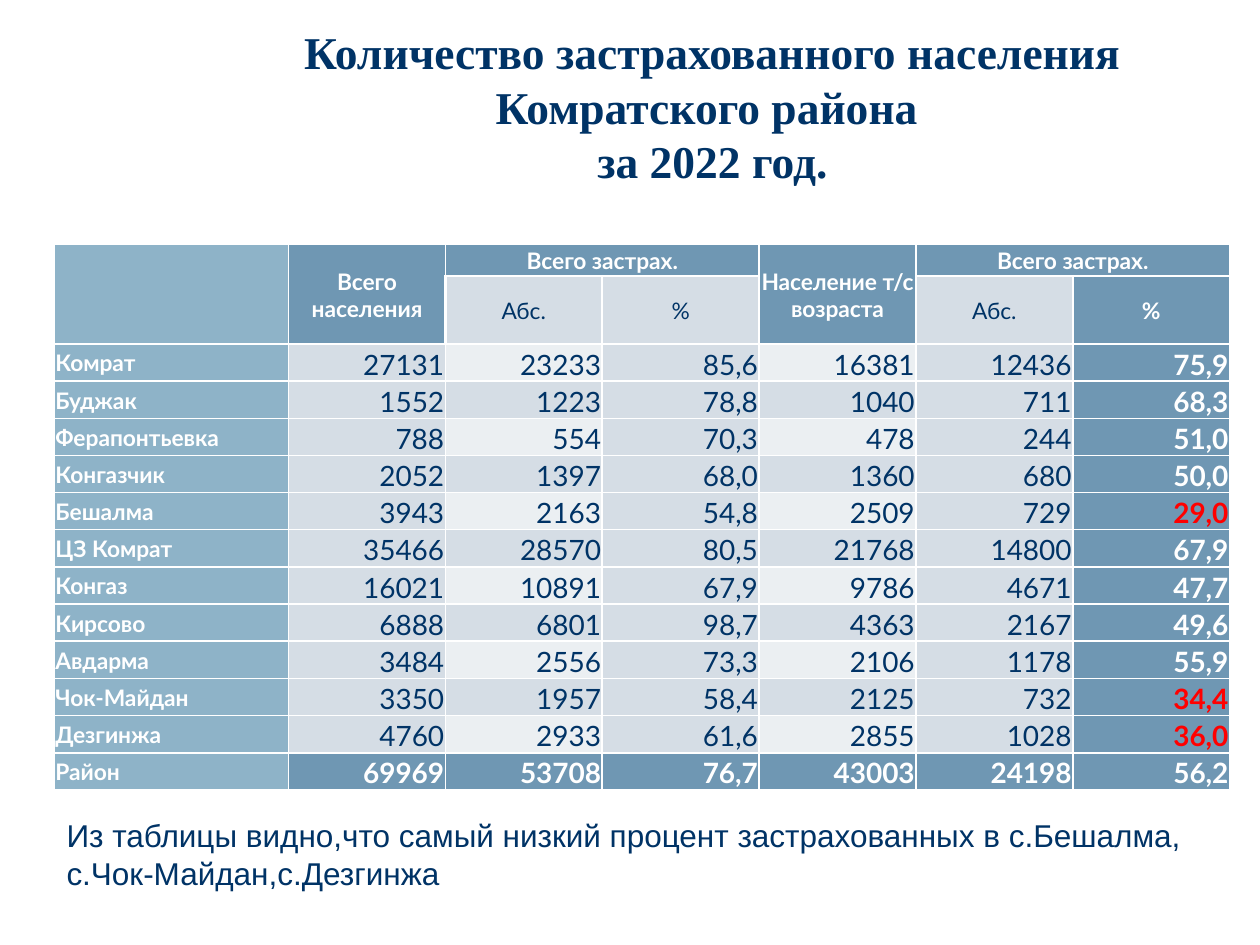
from dataclasses import dataclass

from lxml import etree
from pptx import Presentation
from pptx.dml.color import RGBColor
from pptx.enum.text import MSO_ANCHOR, MSO_AUTO_SIZE, PP_ALIGN
from pptx.oxml.ns import qn
from pptx.util import Inches, Pt

CENTER, RIGHT, JUSTIFY = PP_ALIGN.CENTER, PP_ALIGN.RIGHT, PP_ALIGN.JUSTIFY
MIDDLE, BOTTOM = MSO_ANCHOR.MIDDLE, MSO_ANCHOR.BOTTOM
NO_AUTOFIT = MSO_AUTO_SIZE.NONE
TITLE_ONLY = 5


@dataclass(frozen=True)
class Theme:
    navy: str = "003366"
    white: str = "FFFFFF"
    red: str = "FF0000"
    name_fill: str = "8EB3C8"
    accent_fill: str = "6F97B3"
    band_fill: str = "D5DDE5"
    pale_fill: str = "EBEFF2"
    title_font: str = "Times New Roman"
    table_font: str = "Lato"
    note_font: str = "Arial"
    title_size: int = 26
    label_size: int = 13
    value_size: int = 16
    note_size: int = 18
    thin_line: float = 1
    thick_line: float = 1.5


THEME = Theme()
SLIDE_WIDTH, SLIDE_HEIGHT = Inches(10), Inches(7.5)
GRID_COLUMNS, GRID_ROWS = 100, 75

TITLE = "Количество застрахованного населения\vКомратского района \vза 2022 год."
NOTE = ("Из таблицы видно,что самый низкий процент застрахованных "
        "в с.Бешалма, с.Чок-Майдан,с.Дезгинжа")
HEADERS = [
    ["", "Всего населения", "Всего застрах.", "", "Население т/с возраста", "Всего застрах.", ""],
    ["", "", "Абс.", "%", "", "Абс.", "%"],
]
DISTRICTS = [
    ["Комрат", "27131", "23233", "85,6", "16381", "12436", "75,9"],
    ["Буджак", "1552", "1223", "78,8", "1040", "711", "68,3"],
    ["Ферапонтьевка", "788", "554", "70,3", "478", "244", "51,0"],
    ["Конгазчик", "2052", "1397", "68,0", "1360", "680", "50,0"],
    ["Бешалма", "3943", "2163", "54,8", "2509", "729", "29,0"],
    ["ЦЗ Комрат", "35466", "28570", "80,5", "21768", "14800", "67,9"],
    ["Конгаз", "16021", "10891", "67,9", "9786", "4671", "47,7"],
    ["Кирсово", "6888", "6801", "98,7", "4363", "2167", "49,6"],
    ["Авдарма", "3484", "2556", "73,3", "2106", "1178", "55,9"],
    ["Чок-Майдан", "3350", "1957", "58,4", "2125", "732", "34,4"],
    ["Дезгинжа", "4760", "2933", "61,6", "2855", "1028", "36,0"],
]
TOTAL = ["Район", "69969", "53708", "76,7", "43003", "24198", "56,2"]
LOWEST = {"Бешалма", "Чок-Майдан", "Дезгинжа"}

ROWS = HEADERS + DISTRICTS + [TOTAL]
HEADER_COUNT = len(HEADERS)
LAST_ROW, LAST_COLUMN = len(ROWS) - 1, len(TOTAL) - 1
TALL_COLUMNS = (0, 1, 4)
WIDE_COLUMNS = (2, 5)


def across(columns):
    return round(SLIDE_WIDTH * columns / GRID_COLUMNS)


def down(rows):
    return round(SLIDE_HEIGHT * rows / GRID_ROWS)


def area(left, top, width, height):
    return across(left), down(top), across(width), down(height)


def style_runs(paragraph, font, size, color, bold=False):
    for run in paragraph.runs:
        run.font.name = font
        run.font.size = Pt(size)
        run.font.bold = bold
        run.font.color.rgb = RGBColor.from_string(color)


def add_title(slide):
    title = slide.shapes.title
    title.left, title.top, title.width, title.height = area(15.4, 1.3, 82.3, 14.2)
    frame = title.text_frame
    frame.auto_size = NO_AUTOFIT
    frame.vertical_anchor = MIDDLE
    frame.text = TITLE
    frame.paragraphs[0].alignment = CENTER
    style_runs(frame.paragraphs[0], THEME.title_font, THEME.title_size, THEME.navy, True)


def add_note(slide):
    frame = slide.shapes.add_textbox(*area(4.3, 64.3, 93.3, 7.1)).text_frame
    frame.word_wrap = True
    frame.text = NOTE
    style_runs(frame.paragraphs[0], THEME.note_font, THEME.note_size, THEME.navy)


def is_accent(row, column):
    return row in (0, LAST_ROW) or column == LAST_COLUMN or (row == 1 and column in TALL_COLUMNS)


def fill_color(row, column):
    if column == 0:
        return THEME.name_fill
    if is_accent(row, column):
        return THEME.accent_fill
    is_odd_district = row >= HEADER_COUNT and (row - HEADER_COUNT) % 2 == 0
    return THEME.pale_fill if is_odd_district and column in (2, 4) else THEME.band_fill


def text_color(row, column):
    if column == LAST_COLUMN and ROWS[row][0] in LOWEST:
        return THEME.red
    return THEME.white if column == 0 or is_accent(row, column) else THEME.navy


def thick_sides(row, column):
    """Heavy rules frame the header groups and the total row."""
    def heavy_below(above):
        return above in (0, LAST_ROW - 1) or (above == 1 and column in TALL_COLUMNS)

    sides = {"lnT"} if heavy_below(row - 1) else set()
    if heavy_below(row):
        sides.add("lnB")
    if row == 1 and column in WIDE_COLUMNS:
        sides.add("lnL")
    if row == 1 and column == 3:
        sides.add("lnR")
    return sides


def set_borders(cell, heavy):
    properties = cell._tc.get_or_add_tcPr()
    for side in ("lnL", "lnR", "lnT", "lnB"):
        width = THEME.thick_line if side in heavy else THEME.thin_line
        line = etree.SubElement(properties, qn(f"a:{side}"), w=str(Pt(width)))
        fill = etree.SubElement(line, qn("a:solidFill"))
        etree.SubElement(fill, qn("a:srgbClr"), val=THEME.white)


def format_cell(cell, row, column):
    is_value = row >= HEADER_COUNT and column > 0
    set_borders(cell, thick_sides(row, column))
    cell.fill.solid()
    cell.fill.fore_color.rgb = RGBColor.from_string(fill_color(row, column))
    cell.margin_left = cell.margin_right = cell.margin_top = Inches(0.01)
    cell.margin_bottom = 0
    cell.vertical_anchor = BOTTOM if is_value else MIDDLE
    paragraph = cell.text_frame.paragraphs[0]
    paragraph.add_run().text = ROWS[row][column]
    paragraph.alignment = RIGHT if is_value else CENTER if row < HEADER_COUNT else JUSTIFY
    style_runs(paragraph, THEME.table_font,
               THEME.value_size if is_value else THEME.label_size,
               text_color(row, column), column == 0 or is_accent(row, column))


def add_insurance_table(slide):
    width, height, name_width, header_heights = 93.3, 43.3, 18.6, (2.5, 5.4)
    table = slide.shapes.add_table(len(ROWS), len(TOTAL), *area(4.3, 19.4, width, height)).table
    for index, column in enumerate(table.columns):
        column.width = across(name_width if index == 0 else (width - name_width) / LAST_COLUMN)
    body_height = (height - sum(header_heights)) / (len(ROWS) - HEADER_COUNT)
    for index, row in enumerate(table.rows):
        row.height = down(header_heights[index] if index < HEADER_COUNT else body_height)
    for row in range(len(ROWS)):
        for column in range(len(TOTAL)):
            format_cell(table.cell(row, column), row, column)
    for column in TALL_COLUMNS:
        table.cell(0, column).merge(table.cell(1, column))
    for column in WIDE_COLUMNS:
        table.cell(0, column).merge(table.cell(0, column + 1))


def main():
    presentation = Presentation()
    presentation.slide_width, presentation.slide_height = SLIDE_WIDTH, SLIDE_HEIGHT
    slide = presentation.slides.add_slide(presentation.slide_layouts[TITLE_ONLY])
    add_title(slide)
    add_insurance_table(slide)
    add_note(slide)
    presentation.save("out.pptx")


if __name__ == "__main__":
    main()
